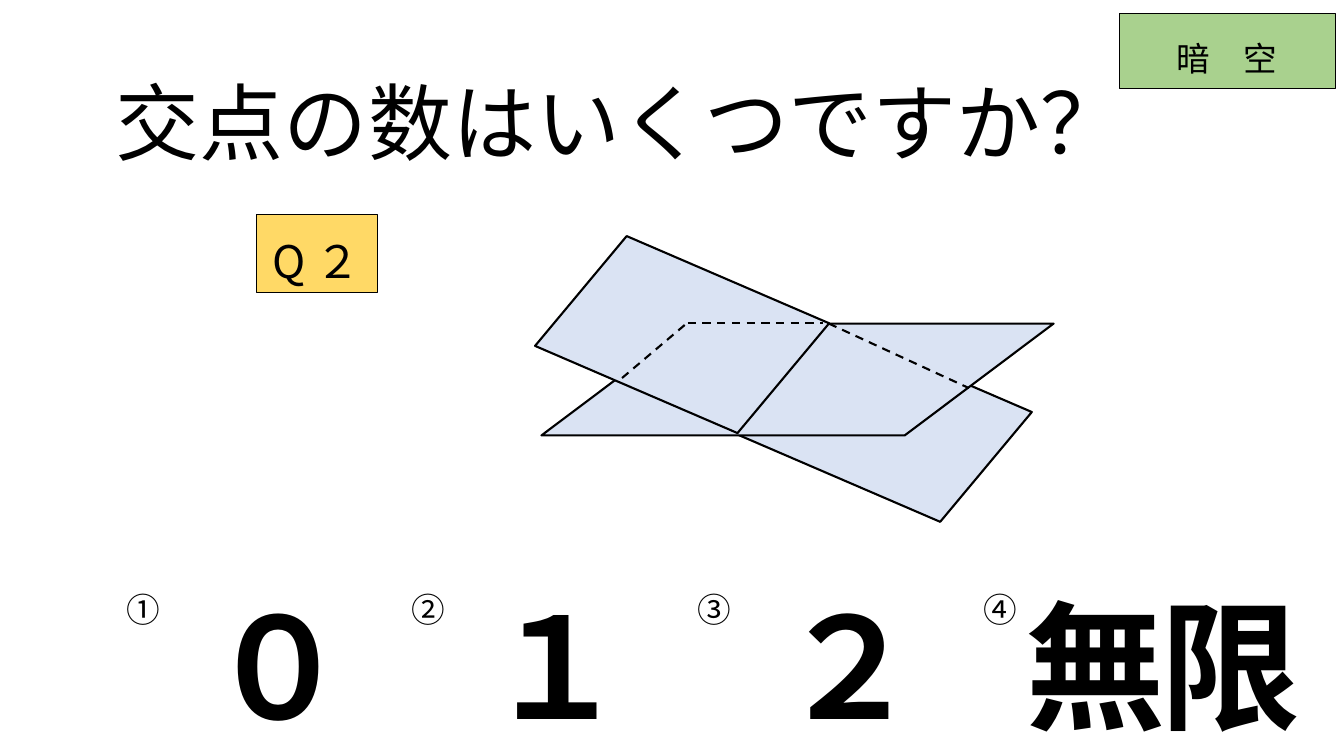
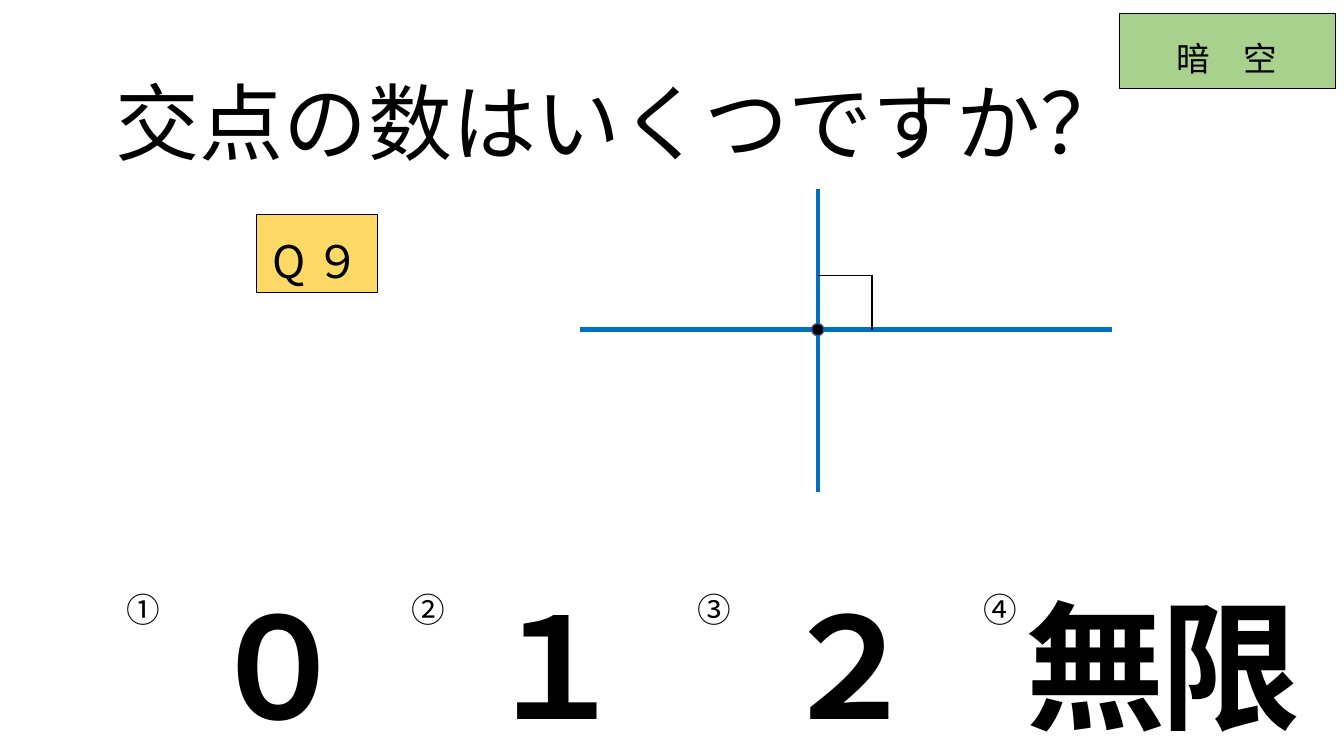
from lxml import etree
from pptx import Presentation
from pptx import util as u
from pptx.dml.color import RGBColor
from pptx.enum import dml, shapes, text
from pptx.oxml.ns import qn

FONT = "Noto Sans CJK JP"
HUES = {"ink": "000000", "paper": "FFFFFF", "green": "A9D18E",
        "gold": "FFD966", "plane": "DAE3F3", "blue": "0070C0", "rim": "325491"}
TITLE = {"size": 60, "lead": 1.5, "anchor": "BOTTOM"}
TAG = {"size": 24, "lead": 1.5, "before": 10, "anchor": "TOP"}
LABEL = {"size": 32, "lead": 1.5, "anchor": "BOTTOM"}
ANSWER = {"size": 100, "bold": True}
ANSWERS = [("０", 1.97, 1.56, 0), ("１", 4.73, 1.56, 0),
           ("２", 7.63, 1.56, 0), ("無限", 10.05, 2.97, -3)]
MARKS = "①②③④"


def hue(name):
    return RGBColor.from_string(HUES[name])


def span(*nums):
    return [u.Inches(n) for n in nums]


def write(frame, words, size, bold=None, lead=None, before=None,
          anchor="MIDDLE", align="CENTER", track=0):
    """Put one styled run into a text frame; track is in points."""
    par = frame.paragraphs[0]
    run = par.add_run()
    run.text = words
    looks = [
        (par, {"alignment": getattr(text.PP_ALIGN, align), "line_spacing": lead,
               "space_before": None if before is None else u.Pt(before)}),
        (run.font, {"name": FONT, "size": u.Pt(size), "bold": bold}),
        (frame, {"word_wrap": True,
                 "vertical_anchor": getattr(text.MSO_ANCHOR, anchor)}),
    ]
    for item, look in looks:
        for key, val in look.items():
            if val is not None:
                setattr(item, key, val)
    run.font.color.rgb = hue("ink")
    props = run._r.get_or_add_rPr()
    etree.SubElement(props, qn("a:ea")).set("typeface", FONT)
    if track:
        props.set("spc", str(track * 100))


def stroke(item, color, width):
    item.line.color.rgb = hue(color)
    item.line.width = u.Pt(width)


def shape(slide, kind, box, fill, line="ink", width=0.5):
    item = slide.shapes.add_shape(getattr(shapes.MSO_SHAPE, kind), *span(*box))
    item.shadow.inherit = False
    item.fill.solid()
    item.fill.fore_color.rgb = hue(fill)
    stroke(item, line, width)
    return item


def line(slide, ends, color="ink", width=1.5, dash=False):
    item = slide.shapes.add_connector(shapes.MSO_CONNECTOR.STRAIGHT, *span(*ends))
    stroke(item, color, width)
    if dash:
        item.line.dash_style = dml.MSO_LINE.DASH
    etree.SubElement(item._element.spPr, qn("a:effectLst"))


def label(slide, box, words, **look):
    write(slide.shapes.add_textbox(*span(*box)).text_frame, words, **look)


def plane(slide, box, slant, turn=0):
    item = shape(slide, "PARALLELOGRAM", box, "plane", width=1.5)
    item.adjustments[0] = slant
    item.rotation = turn


def marks(slide):
    """Table of the choice numbers."""
    box = span(1.15, 5.74, 11.34, 1.25)
    grid = slide.shapes.add_table(1, len(MARKS), *box).table
    for cell, mark in zip(grid.iter_cells(), MARKS):
        cell.fill.background()
        write(cell.text_frame, mark, 24, align="LEFT", anchor="TOP")


def planes(slide):
    """Two planes that cross, with hidden edges dashed."""
    plane(slide, (7.48, 3.52, 2.59, 1.36), 0.297, 23.3)
    plane(slide, (5.37, 3.21, 5.08, 1.11), 1.331)
    plane(slide, (5.47, 2.64, 2.59, 1.36), 0.297, 23.3)
    for ends in [(6.17, 3.75, 6.82, 3.2), (6.82, 3.2, 8.16, 3.2),
                 (8.22, 3.21, 9.61, 3.85)]:
        line(slide, ends, dash=True)


def cross(slide):
    """Two lines that meet at a right angle."""
    x, y, side, dot = 8.11, 3.27, 0.54, 0.12
    line(slide, (5.75, y, 11.03, y), "blue", 3)
    line(slide, (x, 4.88, x, 1.88), "blue", 3)
    shape(slide, "OVAL", (x - dot / 2, y - dot / 2, dot, dot), "ink", "rim", 1)
    line(slide, (x, y - side, x + side, y - side), width=0.5)
    line(slide, (x + side, y - side, x + side, y), width=1)


def quiz(deck, num, draw):
    slide = deck.slides.add_slide(deck.slide_layouts[6])
    label(slide, (0.83, 0.73, 10.64, 1.02), "交点の数はいくつですか？", **TITLE)
    tag = shape(slide, "RECTANGLE", (11.1, 0.13, 2.14, 0.75), "green")
    write(tag.text_frame, "暗　空", **TAG)
    marks(slide)
    card = shape(slide, "RECTANGLE", (2.54, 2.13, 1.2, 0.77), "gold")
    write(card.text_frame, f"Q {num}", **LABEL)
    for words, left, width, track in ANSWERS:
        label(slide, (left, 5.83, width, 1.5), words, track=track, **ANSWER)
    draw(slide)


def main():
    deck = Presentation()
    deck.slide_width, deck.slide_height = span(13.33, 7.5)
    for num, draw in [("２", planes), ("９", cross)]:
        quiz(deck, num, draw)
    deck.save("out.pptx")


if __name__ == "__main__":
    main()
